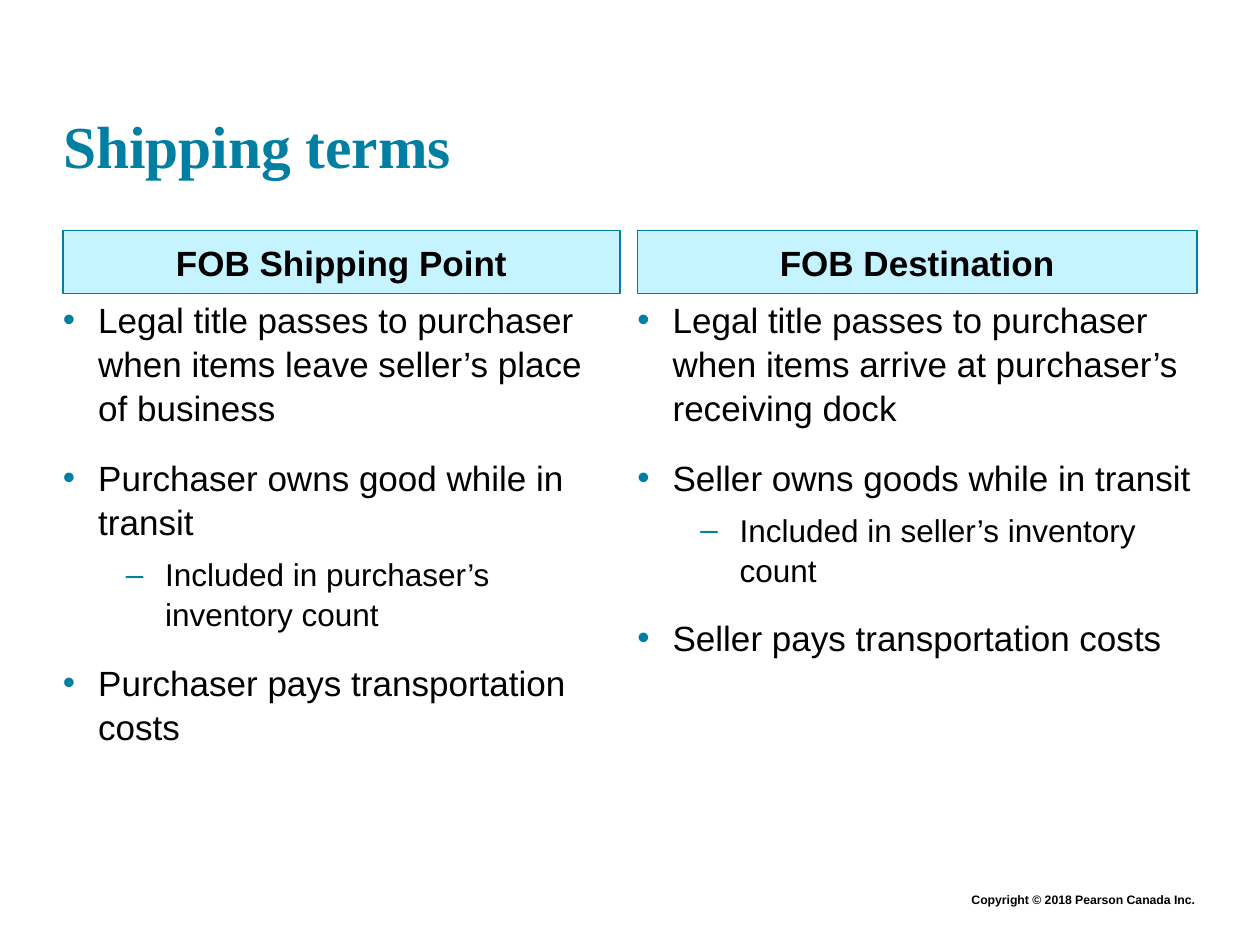
import dataclasses
import typing

import lxml.etree
import pptx
import pptx.dml.color
import pptx.enum.shapes
import pptx.enum.text
import pptx.oxml.ns
import pptx.util

Cm = pptx.util.Cm
Pt = pptx.util.Pt
ALIGN = pptx.enum.text.PP_ALIGN
ANCHOR = pptx.enum.text.MSO_ANCHOR
HUES = {"teal": "007FA3", "pale": "C5F3FF", "text": "000000"}


@dataclasses.dataclass
class Level:
    mark: str
    size: int
    before: int
    left: float
    hang: float


@dataclasses.dataclass
class Column:
    left: float
    width: float
    head: str
    items: list[tuple[int, str]]


LEVELS = [Level("•", 20, 15, 0.71, 0.71), Level("–", 18, 6, 2.06, 0.79)]
COLUMNS = [
    Column(1.27, 11.23, "FOB Shipping Point", [
        (0, "Legal title passes to purchaser when items leave seller’s place of business"),
        (0, "Purchaser owns good while in transit"),
        (1, "Included in purchaser’s inventory count"),
        (0, "Purchaser pays transportation costs"),
    ]),
    Column(12.85, 11.28, "FOB Destination", [
        (0, "Legal title passes to purchaser when items arrive at purchaser’s receiving dock"),
        (0, "Seller owns goods while in transit"),
        (1, "Included in seller’s inventory count"),
        (0, "Seller pays transportation costs"),
    ]),
]


def color(name: str) -> pptx.dml.color.RGBColor:
    return pptx.dml.color.RGBColor.from_string(HUES[name])


def style(par: typing.Any, size: float, bold: bool = False,
          hue: str = "text", face: str = "Arial") -> None:
    for run in par.runs:
        run.font.name = face
        run.font.size = Pt(size)
        run.font.bold = bold
        run.font.color.rgb = color(hue)


def setup(frame: typing.Any, anchor: typing.Any) -> None:
    """Wrap the text, drop the insets and fix the box size."""
    frame.word_wrap = True
    frame.auto_size = pptx.enum.text.MSO_AUTO_SIZE.NONE
    frame.vertical_anchor = anchor
    frame.margin_left = frame.margin_right = 0
    frame.margin_top = frame.margin_bottom = 0


def bullet(par: typing.Any, level: Level) -> None:
    props = par._p.get_or_add_pPr()
    props.set("marL", str(Cm(level.left)))
    props.set("indent", str(-Cm(level.hang)))
    qn = pptx.oxml.ns.qn
    tint = lxml.etree.SubElement(props, qn("a:buClr"))
    lxml.etree.SubElement(tint, qn("a:srgbClr"), val=HUES["teal"])
    lxml.etree.SubElement(props, qn("a:buFont"), typeface="Arial")
    lxml.etree.SubElement(props, qn("a:buChar"), char=level.mark)


def add_title(slide: typing.Any, text: str) -> None:
    title = slide.shapes.title
    title.left, title.top = Cm(1.27), Cm(0.58)
    title.width, title.height = Cm(22.86), Cm(3.05)
    frame = title.text_frame
    setup(frame, ANCHOR.BOTTOM)
    frame.text = text
    frame.paragraphs[0].alignment = ALIGN.LEFT
    style(frame.paragraphs[0], 34, True, "teal", "Times New Roman")


def add_head(slide: typing.Any, col: Column) -> None:
    box = slide.shapes.add_shape(
        pptx.enum.shapes.MSO_SHAPE.RECTANGLE,
        Cm(col.left), Cm(4.65), Cm(col.width), Cm(1.27))
    box.shadow.inherit = False
    box.fill.solid()
    box.fill.fore_color.rgb = color("pale")
    box.line.color.rgb = color("teal")
    box.line.width = Pt(0.75)
    setup(box.text_frame, ANCHOR.MIDDLE)
    box.text_frame.text = col.head
    box.text_frame.paragraphs[0].alignment = ALIGN.CENTER
    style(box.text_frame.paragraphs[0], 20, True)


def add_list(slide: typing.Any, col: Column) -> None:
    box = slide.shapes.add_textbox(
        Cm(col.left), Cm(5.97), Cm(col.width), Cm(10.24))
    frame = box.text_frame
    setup(frame, ANCHOR.TOP)
    for pos, (depth, text) in enumerate(col.items):
        level = LEVELS[depth]
        par = frame.add_paragraph() if pos else frame.paragraphs[0]
        par.text = text
        par.level = depth
        bullet(par, level)
        par.line_spacing = 1.05
        if pos:
            par.space_before = Pt(level.before)
        style(par, level.size)


def add_foot(slide: typing.Any, text: str) -> None:
    box = slide.shapes.add_textbox(Cm(4.45), Cm(17.86), Cm(19.89), Cm(0.56))
    box.text_frame.word_wrap = True
    box.text_frame.text = text
    box.text_frame.paragraphs[0].alignment = ALIGN.RIGHT
    style(box.text_frame.paragraphs[0], 7, True)


def main() -> None:
    deck = pptx.Presentation()
    deck.slide_width, deck.slide_height = Cm(25.4), Cm(19.05)
    slide = deck.slides.add_slide(deck.slide_layouts[5])
    add_title(slide, "Shipping terms")
    for col in COLUMNS:
        add_head(slide, col)
        add_list(slide, col)
    add_foot(slide, "Copyright © 2018 Pearson Canada Inc.")
    deck.save("out.pptx")


if __name__ == "__main__":
    main()
